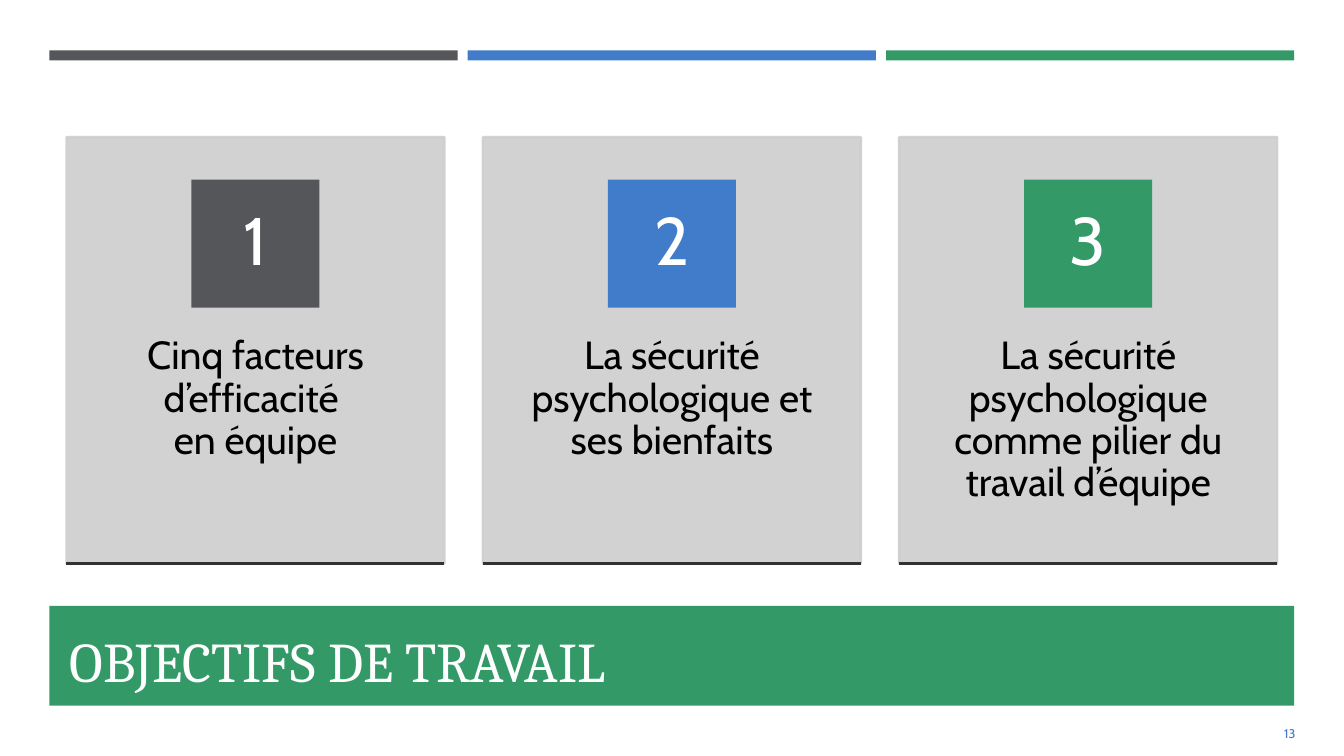
"""Build the slide of three numbered work objectives."""
from lxml.etree import SubElement
from pptx import Presentation
from pptx.dml.color import RGBColor
from pptx.enum.shapes import MSO_CONNECTOR, MSO_SHAPE
from pptx.enum.text import MSO_ANCHOR as ANCHOR, PP_ALIGN as ALIGN
from pptx.oxml.ns import qn
from pptx.util import Pt


def add_rect(left, top, width, height, color):
    """Add a flat rectangle without an outline."""
    sp = s.shapes.add_shape(MSO_SHAPE.RECTANGLE, Pt(left), Pt(top), Pt(width), Pt(height))
    sp.shadow.inherit = False
    sp.fill.solid()
    sp.fill.fore_color.rgb = RGBColor.from_string(color)
    sp.line.fill.background()
    return sp


def write(sp, lines, size, color, font="Cabin", align=ALIGN.CENTER,
          anchor=ANCHOR.MIDDLE, insets=(7.2, 3.6), spacing=0.9):
    """Write one paragraph with line breaks into a shape."""
    tf = sp.text_frame
    tf.word_wrap = True
    tf.vertical_anchor = anchor
    tf.margin_left = tf.margin_right = Pt(insets[0])
    tf.margin_top = tf.margin_bottom = Pt(insets[1])
    p = tf.paragraphs[0]
    p.alignment = align
    p.line_spacing = spacing
    p.space_before = Pt(0)
    for i, line in enumerate(lines):
        if i:
            p.add_line_break()
        r = p.add_run()
        r.text = line
        r.font.name = font
        r.font.size = Pt(size)
        r.font.color.rgb = RGBColor.from_string(color)


prs = Presentation()
prs.slide_width, prs.slide_height = Pt(960), Pt(540)
s = prs.slides.add_slide(prs.slide_layouts[5])

GREEN = "339966"
BLUE = "407CCA"
objectives = [
    ("55565A", ["Cinq facteurs d’efficacité ", "en équipe"]),
    (BLUE, ["La sécurité psychologique et ses bienfaits"]),
    (GREEN, ["La sécurité psychologique comme pilier du travail d’équipe"]),
]

for i, (color, lines) in enumerate(objectives):
    add_rect(35.3 + 298.8 * i, 36, 291.6, 7.2, color)

    left = 47.5 + 297.4 * i
    card = add_rect(left, 98, 270, 304.5, "CECECE")
    card.line.color.rgb = RGBColor.from_string("CECECE")
    card.line.width = Pt(1.75)
    for clr in card.element.spPr.iter(qn("a:srgbClr")):
        SubElement(clr, qn("a:alpha"), val="90000")

    label = s.shapes.add_textbox(Pt(left), Pt(214), Pt(270), Pt(183))
    write(label, lines, 28, "000000", anchor=ANCHOR.TOP, insets=(21.6, 26))

    tile = add_rect(left + 89.3, 128.4, 91.4, 91.4, color)
    write(tile, [str(i + 1)], 48, "FFFFFF", insets=(7.2, 0.7))

    rule = s.shapes.add_connector(MSO_CONNECTOR.STRAIGHT, Pt(left), Pt(402.5), Pt(left + 270), Pt(402.5))
    rule.line.color.rgb = RGBColor.from_string("323232")
    rule.line.width = Pt(1.75)
    SubElement(rule.element.spPr, qn("a:effectLst"))

add_rect(35.3, 432.7, 889.2, 71.3, GREEN)
title = s.shapes.title
title.left, title.top, title.width, title.height = Pt(42.5), Pt(440), Pt(868.3), Pt(62.6)
write(title, ["OBJECTIFS DE TRAVAIL"], 40, "FFFEFF", "Cambria", ALIGN.LEFT, spacing=1.0)
title.element.getparent().append(title.element)

number = s.shapes.add_textbox(Pt(849.6), Pt(509.5), Pt(82.8), Pt(28.8))
write(number, ["13"], 9, BLUE, align=ALIGN.RIGHT, spacing=1.0)

prs.save("out.pptx")
